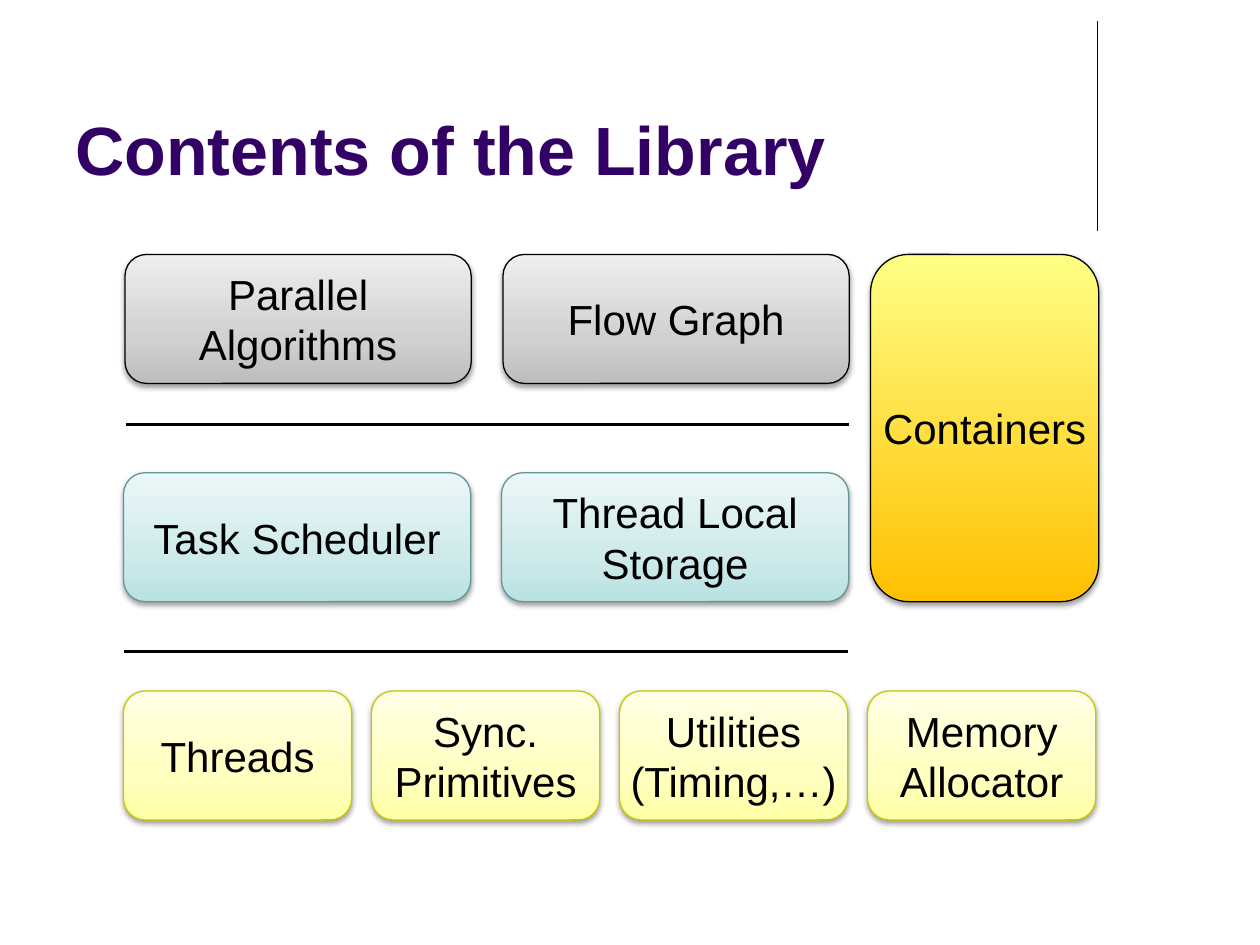
from copy import deepcopy

from lxml import etree
from pptx import Presentation
from pptx.dml.color import RGBColor
from pptx.enum.shapes import MSO_CONNECTOR, MSO_SHAPE
from pptx.enum.text import MSO_ANCHOR, PP_ALIGN
from pptx.oxml.ns import qn
from pptx.util import Cm, Pt

ROUNDED = MSO_SHAPE.ROUNDED_RECTANGLE
STRAIGHT = MSO_CONNECTOR.STRAIGHT
MIDDLE, BOTTOM = MSO_ANCHOR.MIDDLE, MSO_ANCHOR.BOTTOM
CENTER = PP_ALIGN.CENTER

BLACK = RGBColor(0x00, 0x00, 0x00)
PURPLE = RGBColor(0x33, 0x00, 0x66)
TEAL_EDGE = RGBColor(0x63, 0x97, 0x97)
YELLOW_EDGE = RGBColor(0xC8, 0xC8, 0x00)
# Gradient colours run from the bottom of a block to its top
GREYS = [RGBColor(0xBD, 0xBD, 0xBD), RGBColor(0xD1, 0xD1, 0xD1), RGBColor(0xEE, 0xEE, 0xEE)]
TEALS = [RGBColor(0xB9, 0xE2, 0xE2), RGBColor(0xCE, 0xEA, 0xEA), RGBColor(0xEC, 0xF7, 0xF7)]
YELLOWS = [RGBColor(0xFF, 0xFF, 0xA5), RGBColor(0xFF, 0xFF, 0xBF), RGBColor(0xFF, 0xFF, 0xE7)]
GOLDS = [RGBColor(0xFF, 0xC0, 0x00), RGBColor(0xFF, 0xFF, 0x85)]

FONT = "Arial"
TITLE = "Contents of the Library"

# "\v" breaks a line inside a paragraph, "\n" starts a new paragraph.
# labels, left, pitch, width, gradient, edge
LAYERS = [
    (["Parallel\vAlgorithms", "Flow Graph"], 2.52, 7.62, 6.98, GREYS, BLACK),
    (["Task Scheduler", "Thread Local\nStorage"], 2.49, 7.62, 7.0, TEALS, TEAL_EDGE),
    (["Threads", "Sync.\vPrimitives", "Utilities\n(Timing,…)", "Memory\vAllocator"],
     2.49, 5.0, 4.6, YELLOWS, YELLOW_EDGE),
]
LAYER_TOP, LAYER_PITCH, BLOCK_HEIGHT = 5.13, 4.4, 2.6
CONTAINERS_LEFT, CONTAINERS_WIDTH = 17.55, 4.6

# x1, y1, x2, y2, weight
RULES = [
    (22.12, 0.43, 22.12, 4.65, 0.75),
    (2.54, 8.56, 17.12, 8.56, 1.5),
    (2.51, 13.13, 17.09, 13.13, 1.5),
]


def add_soft_shadow(shape):
    shape.shadow.inherit = False
    effects = shape._element.spPr.find(qn("a:effectLst"))
    shadow = etree.SubElement(effects, qn("a:outerShdw"), blurRad="40000", dist="20000",
                              dir="5400000", rotWithShape="0")
    color = etree.SubElement(shadow, qn("a:srgbClr"), val="000000")
    etree.SubElement(color, qn("a:alpha"), val="38000")


def fill_upward(shape, colors):
    """Fill with a gradient whose first colour is at the bottom."""
    shape.fill.gradient()
    shape.fill.gradient_angle = 90
    if len(colors) == 3:
        stop_list = shape._element.spPr.find(".//" + qn("a:gsLst"))
        stop_list.insert(1, deepcopy(stop_list[0]))
    positions = [0, 0.35, 1] if len(colors) == 3 else [0, 1]
    for stop, position, color in zip(shape.fill.gradient_stops, positions, colors):
        stop.position = position
        stop.color.rgb = color


def add_block(slide, label, left, top, width, height, colors, edge):
    block = slide.shapes.add_shape(ROUNDED, Cm(left), Cm(top), Cm(width), Cm(height))
    fill_upward(block, colors)
    block.line.color.rgb = edge
    block.line.width = Pt(0.75)
    add_soft_shadow(block)
    frame = block.text_frame
    frame.word_wrap = False
    frame.vertical_anchor = MIDDLE
    frame.text = label
    for paragraph in frame.paragraphs:
        paragraph.alignment = CENTER
        paragraph.font.name = FONT
        paragraph.font.size = Pt(24)
        paragraph.font.color.rgb = BLACK


def add_rule(slide, x1, y1, x2, y2, weight):
    rule = slide.shapes.add_connector(STRAIGHT, Cm(x1), Cm(y1), Cm(x2), Cm(y2))
    rule.line.color.rgb = BLACK
    rule.line.width = Pt(weight)
    etree.SubElement(rule._element.spPr, qn("a:effectLst"))


def add_title(slide):
    frame = slide.shapes.add_textbox(Cm(1.27), Cm(0.33), Cm(20.95), Cm(3.6)).text_frame
    frame.word_wrap = True
    frame.vertical_anchor = BOTTOM
    frame.text = TITLE
    font = frame.paragraphs[0].font
    font.name = FONT
    font.size = Pt(39)
    font.bold = True
    font.color.rgb = PURPLE


def main():
    prs = Presentation()
    prs.slide_width, prs.slide_height = Cm(25.4), Cm(19.05)
    slide = prs.slides.add_slide(prs.slide_layouts[6])

    add_title(slide)
    for row, (labels, left, pitch, width, colors, edge) in enumerate(LAYERS):
        top = LAYER_TOP + row * LAYER_PITCH
        for column, label in enumerate(labels):
            add_block(slide, label, left + column * pitch, top, width, BLOCK_HEIGHT, colors, edge)
    add_block(slide, "Containers", CONTAINERS_LEFT, LAYER_TOP, CONTAINERS_WIDTH,
              LAYER_PITCH + BLOCK_HEIGHT, GOLDS, BLACK)
    for rule in RULES:
        add_rule(slide, *rule)

    prs.save("out.pptx")


if __name__ == "__main__":
    main()
